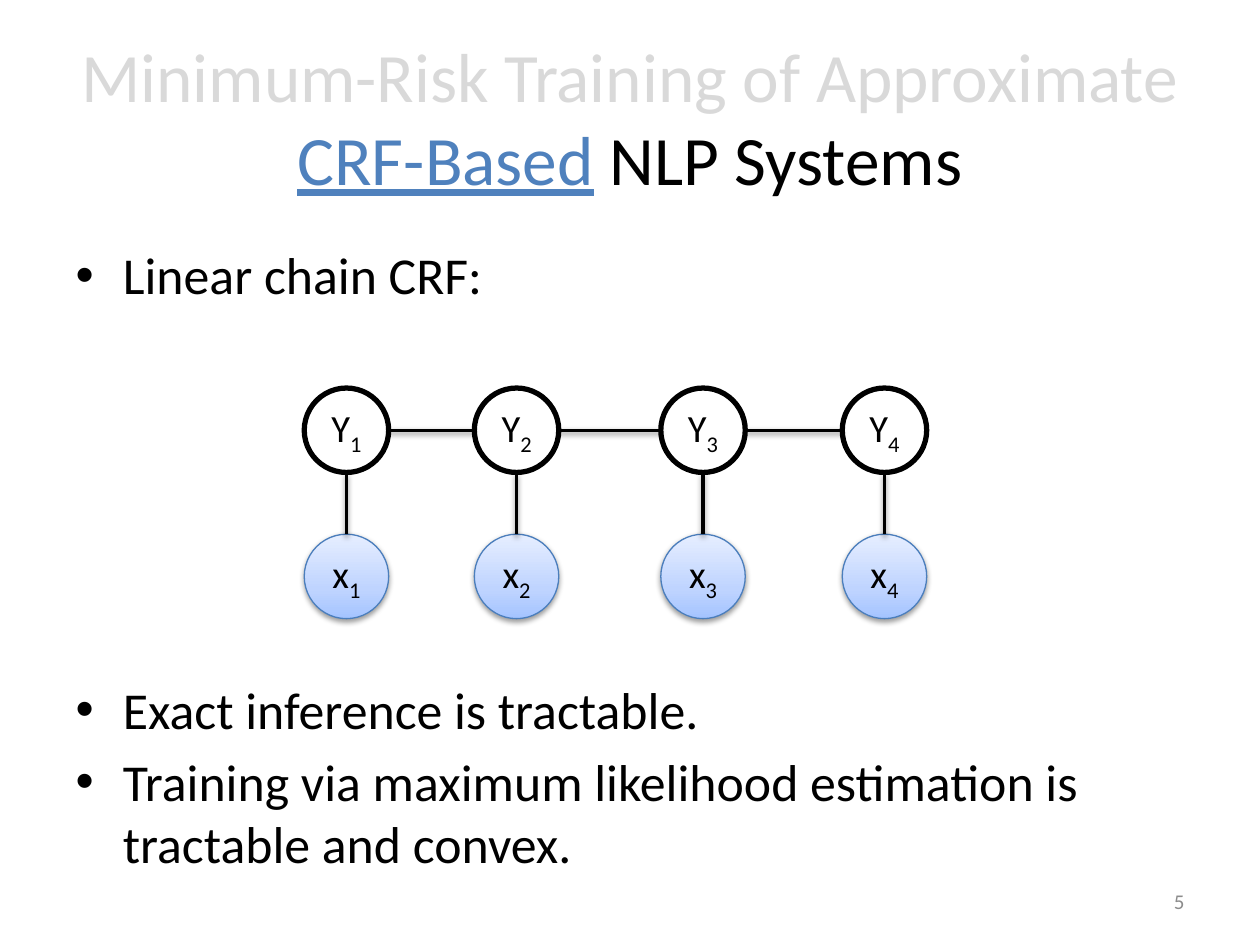
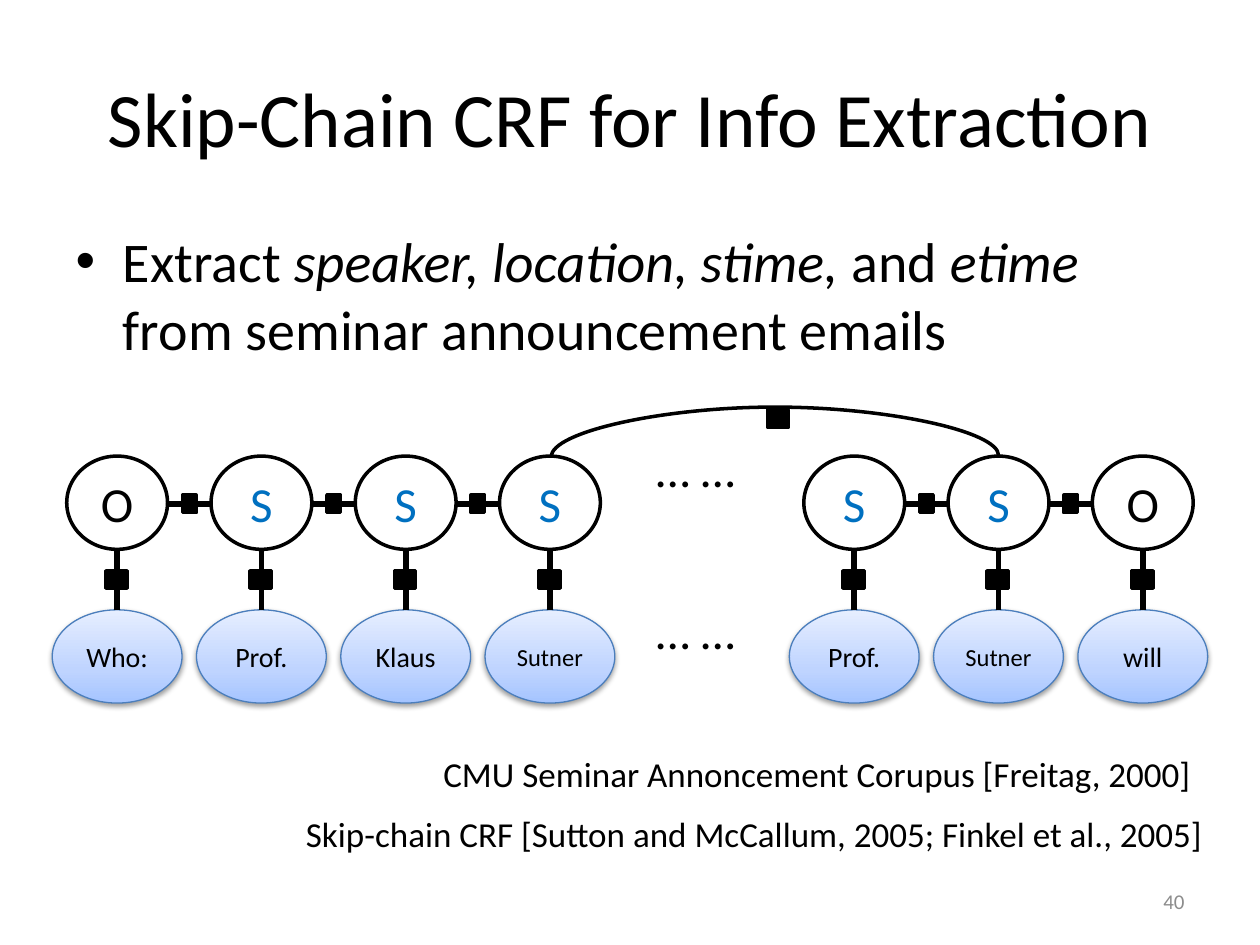
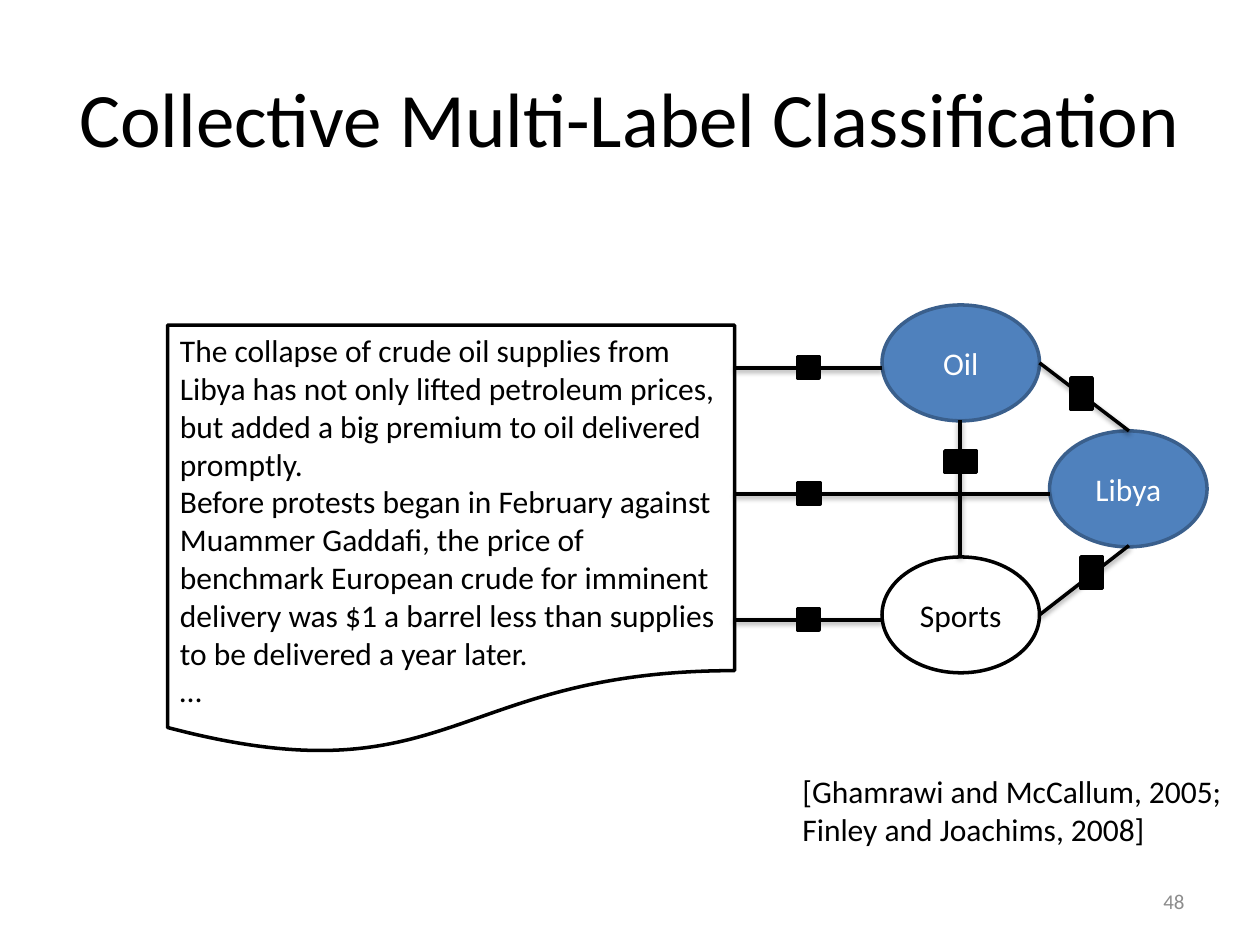
from copy import deepcopy

from lxml.etree import SubElement
from pptx import Presentation
from pptx.dml.color import RGBColor
from pptx.enum.shapes import MSO_CONNECTOR as Connector, MSO_SHAPE as Shape
from pptx.enum.text import MSO_ANCHOR as Anchor, MSO_AUTO_SIZE as AutoSize, PP_ALIGN as Align
from pptx.oxml.ns import qn
from pptx.util import Inches, Pt

FONT = "Calibri"
BLACK, WHITE, GREY, PALE = "000000", "FFFFFF", "8C8C8C", "D9D9D9"
ACCENT, ACCENT_EDGE, OBSERVED_EDGE, LABEL_BLUE = "4F81BD", "3A5F8C", "4B7EBC", "0070C0"
GRADIENT = [(0, "A4C4FF"), (0.35, "BFD4FF"), (1, "E6EEFF")]

TITLE_BOX = (0.5, 0.3, 9, 1.25)
NUMBER_BOX = (7.17, 6.95, 2.33, 0.4)

CHAIN_TITLE = [
    ("Minimum-Risk Training of Approximate ", {"color": PALE}),
    ("CRF-Based", {"color": ACCENT, "underline": True}),
    (" ", {"color": PALE}),
    ("NLP Systems", {}),
]
CHAIN_BULLETS = [
    ([("Linear chain CRF:", {})], 6),
    ([("Exact inference is tractable.", {})], 212.5),
    ([("Training via maximum likelihood estimation is tractable and convex.", {})], 6),
]
CHAIN_CENTERS = [2.75, 4.1, 5.58, 7.02]
CHAIN_ROWS = [("Y", 3.08), ("x", 4.24)]
CHAIN_NODE = 0.67

SKIP_BULLETS = [([
    ("Extract ", {}),
    ("speaker, location, stime, ", {"italic": True}),
    ("and ", {}),
    ("etime", {"italic": True}),
    (" from seminar announcement emails", {}),
], 6)]
SKIP_CHAINS = [
    (0.93, [("O", "Who:"), ("S", "Prof."), ("S", "Klaus"), ("S", "Sutner")]),
    (6.78, [("S", "Prof."), ("S", "Sutner"), ("O", "will")]),
]
SKIP_PITCH = 1.145
SKIP_CITATIONS = [
    ("CMU Seminar Annoncement Corupus [Freitag, 2000]", (3.42, 5.92, 6.17, 0.44)),
    ("Skip-chain CRF [Sutton and McCallum, 2005; Finkel et al., 2005]", (2.33, 6.4, 7.33, 0.44)),
]

ARTICLE = [
    "The collapse of crude oil supplies from Libya has not only lifted petroleum prices, "
    "but added a big premium to oil delivered promptly.",
    "Before protests began in February against Muammer Gaddafi, the price of benchmark "
    "European crude for imminent delivery was $1 a barrel less than supplies to be "
    "delivered a year later.",
    "…",
]
TOPICS = [
    ("Oil", 7, 2.42, ACCENT, ACCENT_EDGE, WHITE),
    ("Libya", 8.33, 3.42, ACCENT, ACCENT_EDGE, WHITE),
    ("Sports", 7, 4.42, WHITE, BLACK, BLACK),
]
TOPIC_LINKS = [
    ((7, 2.92), (5.83, 2.92), (6.33, 2.83, 0.17, 0.17)),
    ((8.33, 3.92), (5.83, 3.92), (6.33, 3.83, 0.18, 0.17)),
    ((7, 4.92), (5.83, 4.92), (6.33, 4.83, 0.17, 0.17)),
    ((7.62, 4.42), (7.62, 3.33), (7.5, 3.58, 0.25, 0.17)),
    ((8.96, 4.33), (8.25, 4.88), (8.58, 4.42, 0.17, 0.25)),
    ((8.96, 3.42), (8.25, 2.88), (8.5, 3, 0.17, 0.25)),
]
TOPIC_CITATION = ["[Ghamrawi and McCallum, 2005;", "Finley and Joachims, 2008]"]


def rgb(value):
    return RGBColor.from_string(value)


def inches(box):
    return [Inches(length) for length in box]


def place(shape, box):
    shape.left, shape.top, shape.width, shape.height = inches(box)


def write(paragraph, pieces, size, color=BLACK, align=Align.LEFT):
    paragraph.alignment = align
    paragraph.font.name = FONT
    paragraph.font.size = Pt(size)
    paragraph.font.color.rgb = rgb(color)
    for text, style in pieces:
        run = paragraph.add_run()
        run.text = text
        if "color" in style:
            run.font.color.rgb = rgb(style["color"])
        if "underline" in style:
            run.font.underline = True
        if "italic" in style:
            run.font.italic = True
        if "baseline" in style:
            run.font._element.set("baseline", style["baseline"])


def add_paragraphs(frame, count):
    return [frame.paragraphs[0]] + [frame.add_paragraph() for _ in range(count - 1)]


def write_lines(frame, lines, size, color=BLACK, align=Align.LEFT):
    frame.word_wrap = True
    for paragraph, line in zip(add_paragraphs(frame, len(lines)), lines):
        write(paragraph, [(line, {})], size, color, align)


def add_text(slide, box, lines, size, color=BLACK, align=Align.LEFT, anchor=Anchor.TOP):
    frame = slide.shapes.add_textbox(*inches(box)).text_frame
    frame.vertical_anchor = anchor
    write_lines(frame, lines, size, color, align)


def add_slide(presentation, title, size, number, bullets=None, bullet_size=32, top=1.75):
    slide = presentation.slides.add_slide(presentation.slide_layouts[1 if bullets else 5])
    heading = slide.shapes.title
    place(heading, TITLE_BOX)
    heading.text_frame.vertical_anchor = Anchor.MIDDLE
    heading.text_frame.auto_size = AutoSize.NONE
    write(heading.text_frame.paragraphs[0], title, size, align=Align.CENTER)
    if bullets:
        body = slide.placeholders[1]
        place(body, (0.5, top, 9, 4.95))
        frame = body.text_frame
        frame.auto_size = AutoSize.NONE
        for paragraph, (pieces, gap) in zip(add_paragraphs(frame, len(bullets)), bullets):
            write(paragraph, pieces, bullet_size)
            paragraph.space_before = Pt(gap)
    add_text(slide, NUMBER_BOX, [number], 12, GREY, Align.RIGHT, Anchor.MIDDLE)
    return slide


def add_shadow(effects):
    shadow = SubElement(effects, qn("a:outerShdw"), blurRad="39370", dist="20320",
                        dir="5400000", rotWithShape="0")
    color = SubElement(shadow, qn("a:srgbClr"), val=BLACK)
    SubElement(color, qn("a:alpha"), val="38000")


def add_box(slide, kind, box, fill=WHITE, edge=BLACK, weight=2):
    shape = slide.shapes.add_shape(kind, *inches(box))
    shape.shadow.inherit = False
    shape.line.color.rgb = rgb(edge)
    shape.line.width = Pt(weight)
    if fill:
        shape.fill.solid()
        shape.fill.fore_color.rgb = rgb(fill)
    else:
        shape.fill.background()
    return shape


def add_node(slide, box, pieces, size, color=BLACK, fill=WHITE, edge=BLACK, weight=2):
    node = add_box(slide, Shape.OVAL, box, fill, edge, weight)
    frame = node.text_frame
    frame.margin_left = frame.margin_right = frame.margin_top = frame.margin_bottom = 0
    frame.vertical_anchor = Anchor.MIDDLE
    write(frame.paragraphs[0], pieces, size, color, Align.CENTER)
    return node


def add_observed(slide, box, pieces, size):
    node = add_node(slide, box, pieces, size, edge=OBSERVED_EDGE, weight=0.75)
    node.fill.gradient()
    node.fill.gradient_angle = 90
    stops = node.element.xpath(".//a:gsLst")[0]
    stops.insert(1, deepcopy(stops[0]))
    for stop, (position, color) in zip(node.fill.gradient_stops, GRADIENT):
        stop.position = position
        stop.color.rgb = rgb(color)
    add_shadow(node.element.spPr.find(qn("a:effectLst")))


def add_link(slide, start, end, weight=2, shadow=False, kind=Connector.STRAIGHT):
    link = slide.shapes.add_connector(kind, *inches(start + end))
    link.line.color.rgb = rgb(BLACK)
    link.line.width = Pt(weight)
    effects = SubElement(link.element.spPr, qn("a:effectLst"))
    if shadow:
        add_shadow(effects)
    return link


def add_factor(slide, box):
    add_box(slide, Shape.RECTANGLE, box, BLACK)


def add_arch(slide, left, right, base, rise):
    thickness = 0.01
    middle, half = (left + right) / 2, (right - left) / 2
    arch = add_link(slide, (middle + thickness, base + half), (middle, base - half),
                    kind=Connector.CURVE)
    properties = arch.element.spPr
    properties.find(qn("a:xfrm")).set("rot", "5400000")
    geometry = properties.find(qn("a:prstGeom"))
    adjustments = geometry.find(qn("a:avLst"))
    if adjustments is None:
        adjustments = SubElement(geometry, qn("a:avLst"))
    SubElement(adjustments, qn("a:gd"), name="adj1",
               fmla=f"val {round(rise / thickness * 100000)}")


def build_linear_chain(presentation):
    slide = add_slide(presentation, CHAIN_TITLE, 39.6, "5", CHAIN_BULLETS, 29.6, 1.88)
    radius = CHAIN_NODE / 2
    (_, label_top), (_, word_top) = CHAIN_ROWS
    for letter, top in CHAIN_ROWS:
        for index, center in enumerate(CHAIN_CENTERS, 1):
            box = (center - radius, top, CHAIN_NODE, CHAIN_NODE)
            pieces = [(letter, {}), (str(index), {"baseline": "-25000"})]
            if letter == "x":
                add_observed(slide, box, pieces, 22)
            else:
                add_node(slide, box, pieces, 22, fill=None, weight=3)
    middle = label_top + radius
    for left, right in zip(CHAIN_CENTERS, CHAIN_CENTERS[1:]):
        add_link(slide, (left + radius, middle), (right - radius, middle), shadow=True)
    for center in CHAIN_CENTERS:
        add_link(slide, (center, label_top + CHAIN_NODE), (center, word_top), shadow=True)


def build_skip_chain(presentation):
    slide = add_slide(presentation, [("Skip-Chain CRF for Info Extraction", {})], 44, "40",
                      SKIP_BULLETS)
    for start, tokens in SKIP_CHAINS:
        for index, (label, word) in enumerate(tokens):
            center = start + index * SKIP_PITCH
            add_observed(slide, (center - 0.515, 4.84, 1.03, 0.74), [(word, {})],
                         14 if word == "Sutner" else 16)
            add_node(slide, (center - 0.4, 3.62, 0.8, 0.74), [(label, {})], 28,
                     LABEL_BLUE if label == "S" else BLACK)
            add_link(slide, (center, 4.36), (center, 4.84), 3.25)
            add_factor(slide, (center - 0.09, 4.53, 0.17, 0.14))
            if index:
                middle = center - SKIP_PITCH / 2
                add_link(slide, (center - SKIP_PITCH + 0.4, 4), (center - 0.4, 4), 3.25)
                add_factor(slide, (middle - 0.055, 3.93, 0.11, 0.14))
    add_arch(slide, 4.37, 7.92, 3.62, 0.4)
    add_factor(slide, (6.09, 3.25, 0.17, 0.14))
    for top in (3.43, 4.72):
        add_text(slide, (5.11, top, 1.19, 0.62), ["… …"], 28)
    for citation, box in SKIP_CITATIONS:
        add_text(slide, box, [citation], 20)


def build_topics(presentation):
    slide = add_slide(presentation, [("Collective Multi-Label Classification", {})], 44, "48")
    add_text(slide, (6.27, 6.08, 3.6, 0.71), TOPIC_CITATION, 18)
    article = add_box(slide, Shape.FLOWCHART_DOCUMENT, (1.33, 2.58, 4.5, 3.42))
    article.text_frame.vertical_anchor = Anchor.TOP
    write_lines(article.text_frame, ARTICLE, 18)
    for topic, left, top, fill, edge, color in TOPICS:
        add_node(slide, (left, top, 1.25, 0.92), [(topic, {})], 18, color, fill, edge)
    for start, end, factor in TOPIC_LINKS:
        add_link(slide, start, end, shadow=True)
        add_factor(slide, factor)


def main():
    presentation = Presentation()
    presentation.slide_width, presentation.slide_height = inches((10, 7.5))
    build_linear_chain(presentation)
    build_skip_chain(presentation)
    build_topics(presentation)
    presentation.save("out.pptx")


if __name__ == "__main__":
    main()
